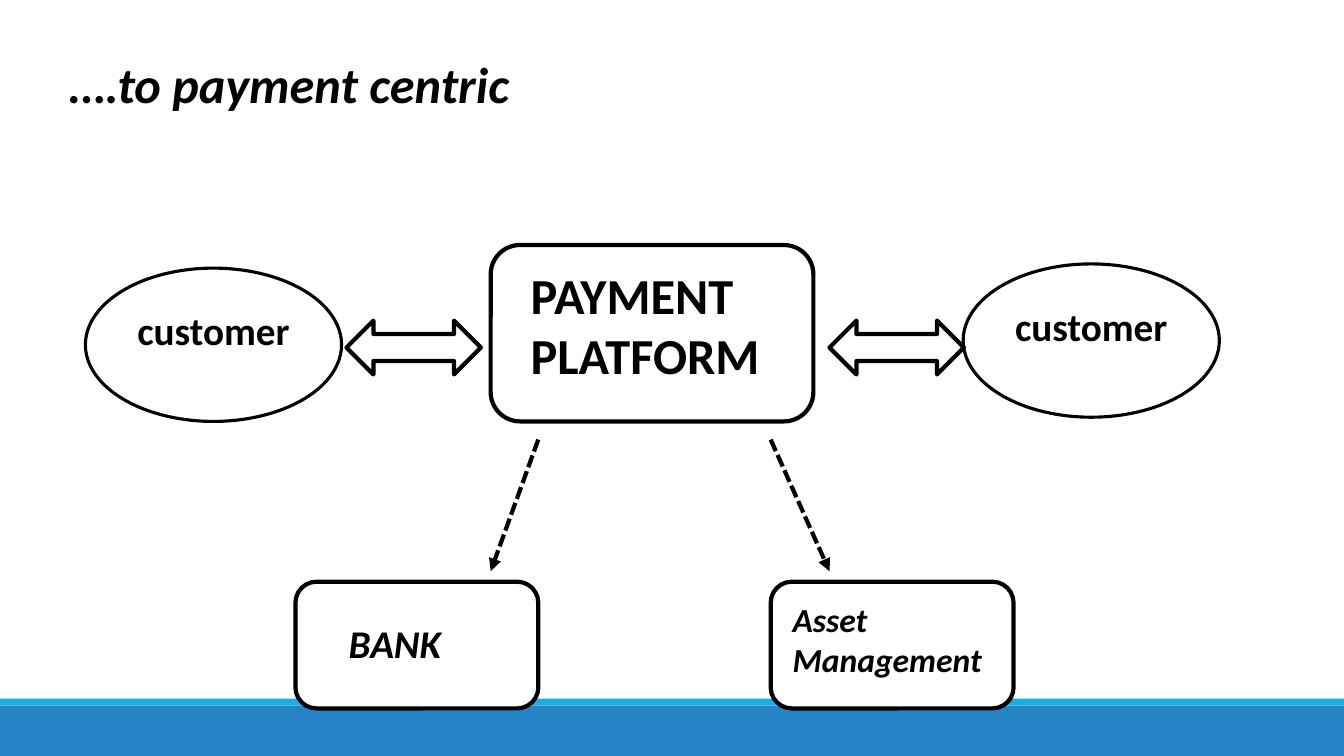
from lxml import etree
from pptx import Presentation
from pptx.dml import color
from pptx.enum import dml, shapes, text
from pptx.oxml import ns
from pptx.util import Pt

HUES = {"ink": "000000", "paper": "FFFFFF", "band": "2683C6", "rule": "1CADE4"}
FORM = shapes.MSO_SHAPE
WIDE, HIGH = 960, 540


def hue(name):
    return color.RGBColor.from_string(HUES[name])


def shape(slide, kind, box, fill="paper", line=3):
    item = slide.shapes.add_shape(kind, *map(Pt, box))
    item.shadow.inherit = False
    item.fill.solid()
    item.fill.fore_color.rgb = hue(fill)
    if line:
        item.line.color.rgb = hue("ink")
        item.line.width = Pt(line)
    else:
        item.line.fill.background()
    return item


def write(item, words, size, italic=False, align=text.PP_ALIGN.LEFT,
          anchor=text.MSO_ANCHOR.TOP):
    frame = item.text_frame
    frame.text = words
    frame.word_wrap = True
    frame.auto_size = text.MSO_AUTO_SIZE.NONE
    frame.vertical_anchor = anchor
    para = frame.paragraphs[0]
    para.alignment = align
    para.line_spacing = 1.0
    para.space_before = Pt(0)
    font = para.runs[0].font
    font.name, font.size = "Calibri", Pt(size)
    font.bold, font.italic = True, italic
    font.color.rgb = hue("ink")


# Footer bands across the slide
def footer(slide, box):
    left, top, width, height = box
    shape(slide, FORM.RECTANGLE, (left, top + 5, width, height - 5), "band", 0)
    shape(slide, FORM.RECTANGLE, (left, top, width, 5), "rule", 0)


# Heading in the title placeholder
def heading(slide, box, words):
    title = slide.shapes.title
    title.left, title.top, title.width, title.height = map(Pt, box)
    write(title, words, 36, True)


# Rounded box with a label set in from its corner
def node(slide, box, words, size, inset, italic=False):
    left, top, width, height = box
    shape(slide, FORM.ROUNDED_RECTANGLE, box)
    dx, dy, wide = inset
    label = slide.shapes.add_textbox(
        Pt(left + dx), Pt(top + dy), Pt(wide), Pt(height - 2 * dy))
    write(label, words, size, italic)


# Customer ellipse, its label raised above the middle
def client(slide, box):
    oval = shape(slide, FORM.OVAL, box, line=2.25)
    write(oval, "customer", 28, align=text.PP_ALIGN.CENTER,
          anchor=text.MSO_ANCHOR.MIDDLE)
    oval.text_frame.margin_bottom = Pt(25)


# Dashed arrow
def arrow(slide, start, end):
    link = slide.shapes.add_connector(
        shapes.MSO_CONNECTOR.STRAIGHT, *map(Pt, start + end))
    link.line.color.rgb = hue("ink")
    link.line.width = Pt(3)
    link.line.dash_style = dml.MSO_LINE.SQUARE_DOT
    tail = etree.SubElement(link.line._get_or_add_ln(), ns.qn("a:tailEnd"))
    tail.set("type", "triangle")
    etree.SubElement(link._element.spPr, ns.qn("a:effectLst"))


# Platform in the middle, customers beside it, services below
def diagram(slide, box):
    left, top, width, height = box
    node(slide, (left + 289.5, top, 230.5, 126), "PAYMENT PLATFORM", 36,
         (21.5, 10, 187))
    for dx, dy in ((width - 183, 13.5), (0, 16.5)):
        client(slide, (left + dx, top + dy, 183, 109.5))
    low = top + height - 90.5
    node(slide, (left + 150, low, 173.5, 90.5), "BANK", 28,
         (31, 23.5, 140), True)
    node(slide, (left + 489.5, low, 173.5, 90.5), "Asset Management", 24,
         (8.5, 8.5, 165), True)
    for dx in (186.5, 531.5):
        shape(slide, FORM.LEFT_RIGHT_ARROW, (left + dx, top + 54, 96, 38.5))
    for x, end in ((323.5, 289.5), (489.5, 531.5)):
        arrow(slide, (left + x, top + 139), (left + end, low - 7.5))


def main():
    deck = Presentation()
    deck.slide_width, deck.slide_height = Pt(WIDE), Pt(HIGH)
    slide = deck.slides.add_slide(deck.slide_layouts[5])
    footer(slide, (0, HIGH - 41, WIDE, 41))
    diagram(slide, (61, 175, 810, 331))
    heading(slide, (42.5, 34.5, 445, 51), "….to payment centric")
    deck.save("out.pptx")


if __name__ == "__main__":
    main()
